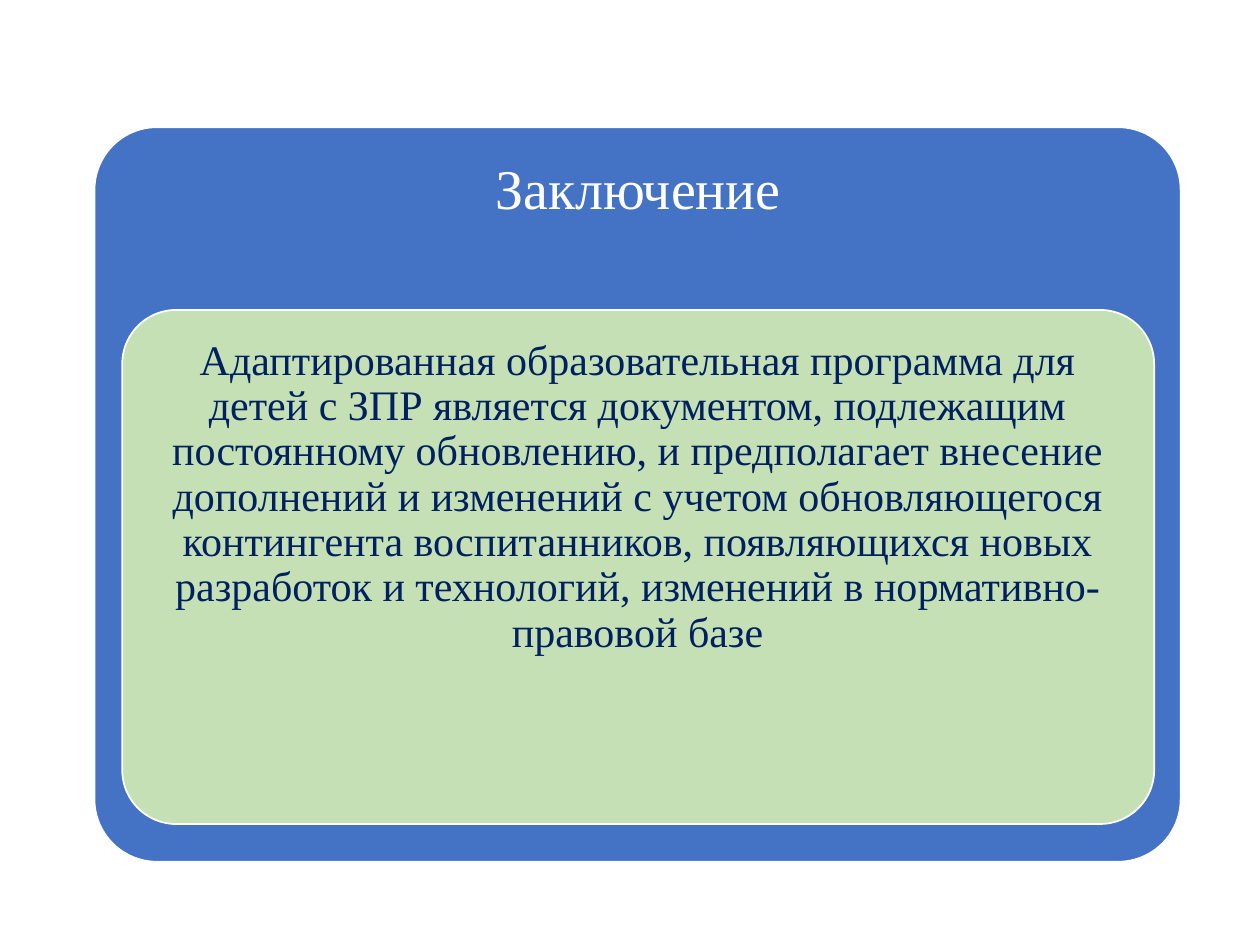
from dataclasses import dataclass

from pptx import Presentation
from pptx.dml.color import RGBColor
from pptx.enum.shapes import MSO_SHAPE
from pptx.enum.text import MSO_ANCHOR, MSO_AUTO_SIZE, PP_ALIGN
from pptx.shapes.autoshape import Shape
from pptx.slide import Slide
from pptx.util import Inches, Pt

ROUNDED = MSO_SHAPE.ROUNDED_RECTANGLE
TOP = MSO_ANCHOR.TOP
CENTER = PP_ALIGN.CENTER
NO_FIT = MSO_AUTO_SIZE.NONE

WHITE = RGBColor(0xFF, 0xFF, 0xFF)
BLUE = RGBColor(0x44, 0x72, 0xC4)
GREEN = RGBColor(0xC5, 0xE0, 0xB4)
NAVY = RGBColor(0x00, 0x20, 0x60)
FONT = "Times New Roman"

TITLE = "Заключение"
CONCLUSION = (
    "Адаптированная образовательная программа для детей с ЗПР является "
    "документом, подлежащим постоянному обновлению, и предполагает внесение "
    "дополнений и изменений с учетом обновляющегося контингента воспитанников, "
    "появляющихся новых разработок и технологий, изменений в "
    "нормативно-правовой базе"
)


@dataclass(frozen=True)
class Area:
    left: float
    top: float
    width: float
    height: float

    def lengths(self) -> tuple[int, int, int, int]:
        return (Inches(self.left), Inches(self.top),
                Inches(self.width), Inches(self.height))


@dataclass(frozen=True)
class Panel:
    area: Area
    rounding: float
    color: RGBColor


PANELS = (
    Panel(Area(0.75, 1.01, 8.62, 5.83), 0.085, BLUE),
    Panel(Area(0.97, 2.46, 8.19, 4.08), 0.105, GREEN),
)
TITLE_AREA = Area(0.9, 1.15, 8.33, 1.15)
CONCLUSION_AREA = Area(1.09, 2.59, 7.94, 3.83)


def draw_panel(page: Slide, panel: Panel) -> None:
    shape = page.shapes.add_shape(ROUNDED, *panel.area.lengths())
    shape.adjustments[0] = panel.rounding
    shape.shadow.inherit = False
    shape.fill.solid()
    shape.fill.fore_color.rgb = panel.color
    shape.line.color.rgb = WHITE
    shape.line.width = Pt(1)


def write_text(box: Shape, text: str, *, size: float, color: RGBColor,
               inset: float) -> None:
    frame = box.text_frame
    frame.word_wrap = True
    frame.auto_size = NO_FIT
    frame.vertical_anchor = TOP
    frame.margin_left = frame.margin_right = Inches(inset)
    frame.margin_top = frame.margin_bottom = Inches(inset)
    para = frame.paragraphs[0]
    para.alignment = CENTER
    para.line_spacing = 0.9
    para.space_before = Pt(0)
    span = para.add_run()
    span.text = text
    span.font.name = FONT
    span.font.size = Pt(size)
    span.font.color.rgb = color


def main() -> None:
    deck = Presentation()
    deck.slide_width = Inches(10)
    deck.slide_height = Inches(7.5)
    page = deck.slides.add_slide(deck.slide_layouts[5])

    for panel in PANELS:
        draw_panel(page, panel)

    title = page.shapes.title
    title.left, title.top, title.width, title.height = TITLE_AREA.lengths()
    title.element.getparent().append(title.element)
    write_text(title, TITLE, size=32, color=WHITE, inset=0.13)

    conclusion = page.shapes.add_textbox(*CONCLUSION_AREA.lengths())
    write_text(conclusion, CONCLUSION, size=24, color=NAVY, inset=0.1)

    deck.save("out.pptx")


if __name__ == "__main__":
    main()
